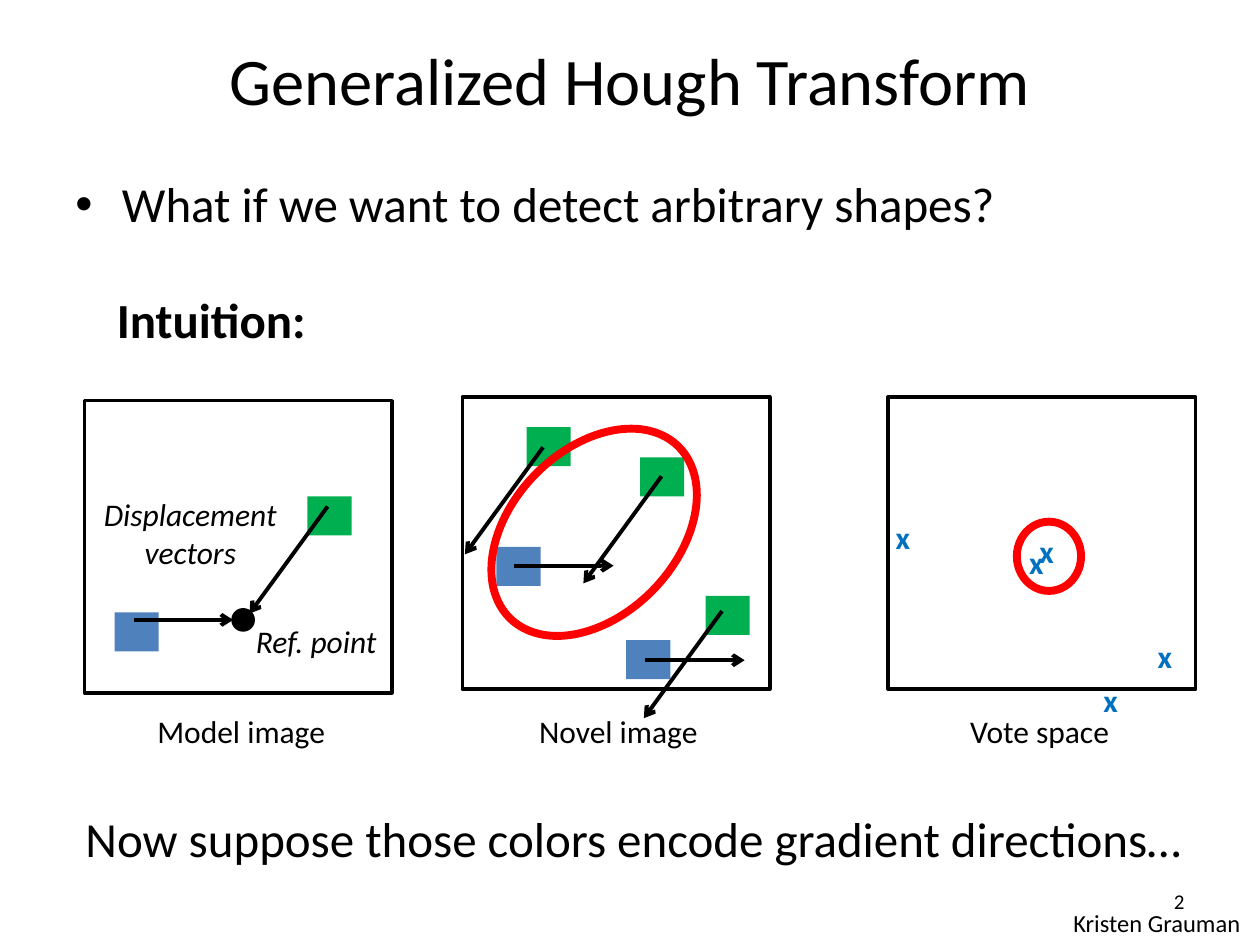
from dataclasses import dataclass

from lxml import etree
from pptx import Presentation
from pptx.dml.color import RGBColor
from pptx.enum import shapes, text
from pptx.oxml.ns import qn
from pptx.util import Inches, Pt


@dataclass(frozen=True)
class Theme:
    font: str = "Calibri"
    ink: str = "000000"
    blue: str = "4F81BD"
    green: str = "00B050"
    vote: str = "0070C0"
    highlight: str = "FF0000"
    title: int = 38
    body: int = 28
    label: int = 18
    credit: int = 14
    number: int = 12
    frame_line: float = 2
    arrow_line: float = 2.25
    ring_line: float = 4.5


THEME = Theme()
PANEL = (2.44, 2.32)
PATCH = (0.35, 0.31)
VOTE = (0.4, 0.4)
# Displacement from each patch colour to the reference point
VECTORS = {THEME.green: (-0.62, 0.85), THEME.blue: (0.79, 0)}
LEFT, CENTER, RIGHT = (text.PP_ALIGN.LEFT, text.PP_ALIGN.CENTER,
                       text.PP_ALIGN.RIGHT)


def color(value):
    return RGBColor.from_string(value)


def format_text(box, words, size, align=LEFT, ink=THEME.ink, bold=False,
                italic=False, wrap=True, anchor=text.MSO_ANCHOR.TOP):
    frame = box.text_frame
    frame.text = words
    frame.word_wrap = wrap
    frame.vertical_anchor = anchor
    para = frame.paragraphs[0]
    para.alignment = align
    font = para.runs[0].font
    font.name, font.size = THEME.font, Pt(size)
    font.bold, font.italic = bold, italic
    font.color.rgb = color(ink)
    return para


def add_text(page, at, words, size, **style):
    box = page.shapes.add_textbox(*map(Inches, at))
    return format_text(box, words, size, **style)


def add_figure(page, kind, at, fill=None, line=None, width=THEME.frame_line):
    shape = page.shapes.add_shape(kind, *map(Inches, at))
    shape.shadow.inherit = False
    if fill:
        shape.fill.solid()
        shape.fill.fore_color.rgb = color(fill)
    else:
        shape.fill.background()
    if line:
        shape.line.color.rgb = color(line)
        shape.line.width = Pt(width)
    else:
        shape.line.fill.background()
    return shape


def add_vector(page, x, y, vector):
    ends = (x, y, x + vector[0], y + vector[1])
    arrow = page.shapes.add_connector(shapes.MSO_CONNECTOR.STRAIGHT,
                                      *map(Inches, ends))
    arrow.line.color.rgb = color(THEME.ink)
    arrow.line.width = Pt(THEME.arrow_line)
    etree.SubElement(arrow.line._get_or_add_ln(), qn("a:tailEnd"), type="arrow")
    etree.SubElement(arrow._element.spPr, qn("a:effectLst"))


def add_ring(page, at):
    return add_figure(page, shapes.MSO_SHAPE.OVAL, at, line=THEME.highlight,
                      width=THEME.ring_line)


def add_panel(page, left, top, caption, caption_at):
    add_figure(page, shapes.MSO_SHAPE.RECTANGLE, (left, top, *PANEL),
               line=THEME.ink)
    add_text(page, (*caption_at, 1.65, 0.4), caption, THEME.label, wrap=False)


def add_patches(page, left, top, patches):
    """Draw patches first, then their vectors; each is (fill, corner, start)."""
    for fill, (x, y), _ in patches:
        add_figure(page, shapes.MSO_SHAPE.RECTANGLE,
                   (left + x, top + y, *PATCH), fill=fill)
    for fill, (x, y), (dx, dy) in patches:
        add_vector(page, left + x + dx, top + y + dy, VECTORS[fill])


def add_model_image(page, left, top):
    add_panel(page, left, top, "Model image", (left + 0.48, 5.6))
    add_figure(page, shapes.MSO_SHAPE.OVAL,
               (left + 1.18, top + 1.66, 0.16, 0.16),
               fill=THEME.ink, line=THEME.ink)
    add_patches(page, left, top, [
        (THEME.blue, (0.24, 1.68), (0.15, 0.06)),
        (THEME.green, (1.77, 0.76), (0.16, 0.08)),
    ])
    for words, x, y, height in (("Ref. point", 0.93, 1.71, 0.4),
                                ("Displacement vectors", -0.07, 0.7, 0.71)):
        add_text(page, (left + x, top + y, 1.82, height), words, THEME.label,
                 align=CENTER, italic=True)


def add_novel_image(page, left, top):
    add_panel(page, left, top, "Novel image", (left + 0.51, 5.6))
    add_patches(page, left, top, [
        (THEME.green, (0.51, 0.24), (0.13, 0.16)),
        (THEME.green, (1.41, 0.48), (0.17, 0.15)),
        (THEME.blue, (0.27, 1.19), (0.14, 0.15)),
        (THEME.blue, (1.3, 1.93), (0.15, 0.16)),
        (THEME.green, (1.93, 1.58), (0.13, 0.12)),
    ])
    ring = add_ring(page, (left + 0.39, top + 0.12, 1.31, 1.91))
    ring.rotation = 44.3


def add_vote_space(page, left, top):
    add_panel(page, left, top, "Vote space", (left + 0.55, 5.6))
    for x, y in ((1.02, 1.11), (1.1, 1.02), (-0.04, 0.91),
                 (1.61, 2.21), (2.04, 1.86)):
        add_text(page, (left + x, top + y, *VOTE), "x", THEME.label,
                 ink=THEME.vote, bold=True)
    add_ring(page, (left + 1.02, top + 0.99, 0.51, 0.55))


def add_heading(page, at):
    title = page.shapes.title
    title.left, title.top, title.width, title.height = map(Inches, at)
    format_text(title, "Generalized Hough Transform", THEME.title,
                align=CENTER, anchor=text.MSO_ANCHOR.MIDDLE)


def add_question(page, at):
    para = add_text(page, at, "What if we want to detect arbitrary shapes?",
                    THEME.body)
    para.space_before = Pt(0.2 * THEME.body)
    indent = Inches(0.37)
    properties = para._p.get_or_add_pPr()
    properties.set("marL", str(indent))
    properties.set("indent", str(-indent))
    etree.SubElement(properties, qn("a:buFont"), typeface="Arial")
    etree.SubElement(properties, qn("a:buChar"), char="•")


def add_footer(page, left, top):
    add_text(page, (left, top, 1.08, 0.4), "2", THEME.number, align=RIGHT,
             anchor=text.MSO_ANCHOR.MIDDLE)
    add_text(page, (left, top + 0.21, 1.58, 0.34), "Kristen Grauman",
             THEME.credit, wrap=False)


def main():
    deck = Presentation()
    deck.slide_width, deck.slide_height = Inches(10), Inches(7.5)
    page = deck.slides.add_slide(deck.slide_layouts.get_by_name("Title Only"))
    add_heading(page, (0, 0, 10, 1.25))
    add_question(page, (0.5, 1.33, 9, 0.87))
    add_text(page, (0.83, 2.25, 2.2, 0.57), "Intuition:", THEME.body, bold=True)
    add_model_image(page, 0.67, 3.18)
    add_novel_image(page, 3.67, 3.15)
    add_vote_space(page, 7.05, 3.15)
    add_text(page, (0.58, 6.37, 9.41, 1.04),
             "Now suppose those colors encode gradient directions…", THEME.body)
    add_footer(page, 8.42, 6.95)
    deck.save("out.pptx")


if __name__ == "__main__":
    main()
